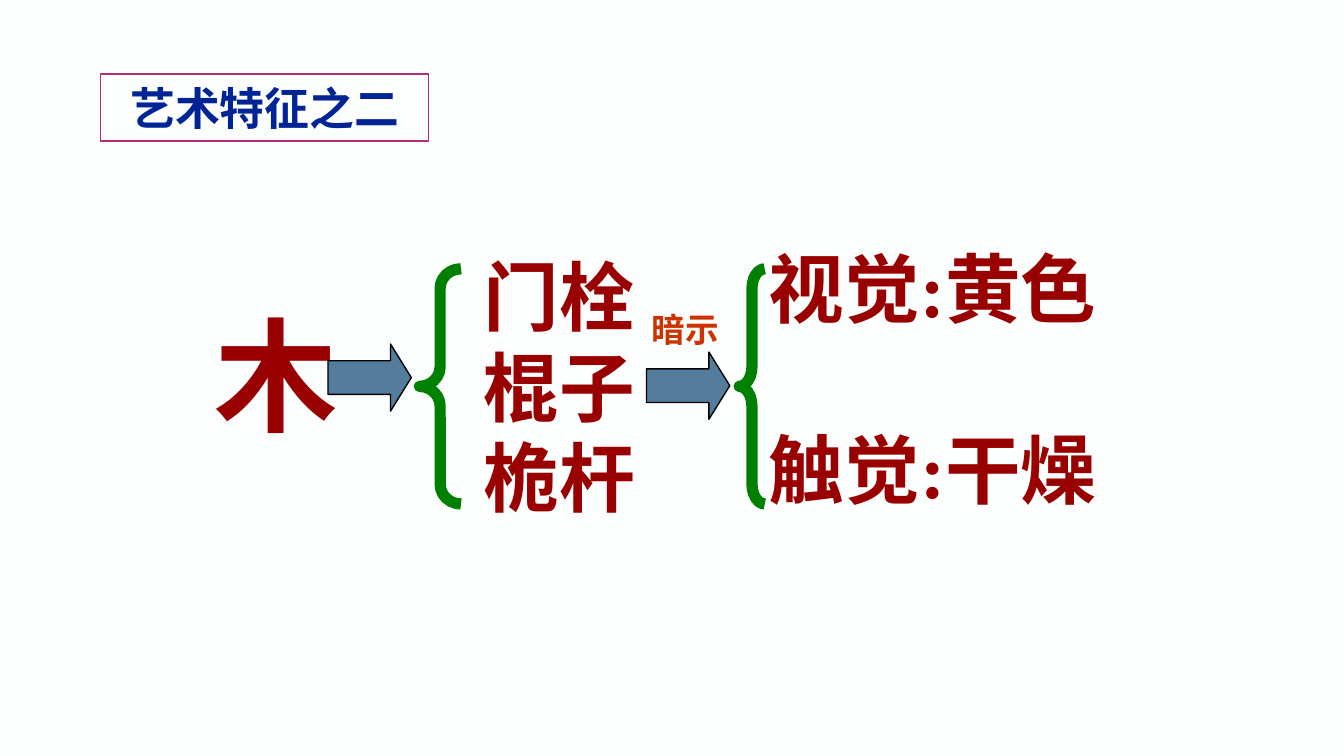
from pptx import Presentation
from pptx.dml.color import RGBColor
from pptx.enum.shapes import MSO_SHAPE
from pptx.enum.text import MSO_ANCHOR, MSO_AUTO_SIZE, PP_ALIGN
from pptx.util import Inches, Pt

ARROW, BRACE = MSO_SHAPE.RIGHT_ARROW, MSO_SHAPE.LEFT_BRACE
CENTER, MIDDLE = PP_ALIGN.CENTER, MSO_ANCHOR.MIDDLE
NO_FIT = MSO_AUTO_SIZE.NONE

PAPER = RGBColor(0xFC, 0xFD, 0xFD)
NAVY = RGBColor(0x00, 0x24, 0x96)
PLUM = RGBColor(0xB3, 0x2A, 0x78)
RED = RGBColor(0x99, 0x00, 0x00)
ORANGE = RGBColor(0xCC, 0x33, 0x00)
GREEN = RGBColor(0x00, 0x80, 0x00)
STEEL = RGBColor(0x54, 0x7D, 0x9D)
BLACK = RGBColor(0, 0, 0)

SANS, SERIF = "Noto Sans CJK SC", "Times New Roman"

# Content: lines, (left, top, width, height), size, font, colour
TITLE = "艺术特征之二"
TEXTS = [
    (["木"], (1.5, 2.18, 1.36, 1.21), 66, SANS, RED),
    (["暗示"], (4.75, 2.25, 0.96, 0.4), 18, SERIF, ORANGE),
    (["视觉:黄色"], (5.62, 1.75, 3, 0.78), 40.5, SERIF, RED),
    (["触觉:干燥"], (5.62, 3.1, 3.12, 0.78), 40.5, SERIF, RED),
    (["门栓", "棍子", "桅杆"], (3.5, 1.81, 1.62, 2.15), 40.5, SANS, RED),
]
ARROWS = [(2.44, 2.56), (4.81, 2.62)]  # left, top
BRACES = [(5.5, 0.19, 0.78), (3.12, 0.31, 0.47)]  # left, width, curve


def write(frame, lines, size, face, color):
    frame.text = "\n".join(lines)
    for para in frame.paragraphs:
        font = para.font
        font.name, font.size, font.bold = face, Pt(size), True
        font.color.rgb = color


def draw(kind, box, adjust, line, weight):
    shape = slide.shapes.add_shape(kind, *map(Inches, box))
    shape.shadow.inherit = False
    for i, value in enumerate(adjust):
        shape.adjustments[i] = value
    shape.line.color.rgb = line
    shape.line.width = Pt(weight)
    return shape


# Slide in 16:9
deck = Presentation()
deck.slide_width = Inches(10)
deck.slide_height = deck.slide_width * 9 // 16
slide = deck.slides.add_slide(deck.slide_layouts[5])
slide.background.fill.solid()
slide.background.fill.fore_color.rgb = PAPER

# Framed title
title = slide.shapes.title
title.left, title.top = Inches(0.75), Inches(0.55)
title.width, title.height = Inches(2.44), Inches(0.5)
title.line.color.rgb = PLUM
title.line.width = Pt(0.75)
frame = title.text_frame
frame.auto_size, frame.vertical_anchor = NO_FIT, MIDDLE
write(frame, [TITLE], 24, "Arial", NAVY)
frame.paragraphs[0].alignment = CENTER

# Words
for lines, box, size, face, color in TEXTS:
    frame = slide.shapes.add_textbox(*map(Inches, box)).text_frame
    frame.word_wrap = True
    write(frame, lines, size, face, color)

# Arrows
for left, top in ARROWS:
    arrow = draw(ARROW, (left, top, 0.62, 0.5), (0.5, 0.31), BLACK, 0.75)
    arrow.fill.solid()
    arrow.fill.fore_color.rgb = STEEL

# Braces
for left, width, curve in BRACES:
    brace = draw(BRACE, (left, 2, width, 1.75), (curve, 0.5), GREEN, 6)
    brace.fill.background()

deck.save("out.pptx")
